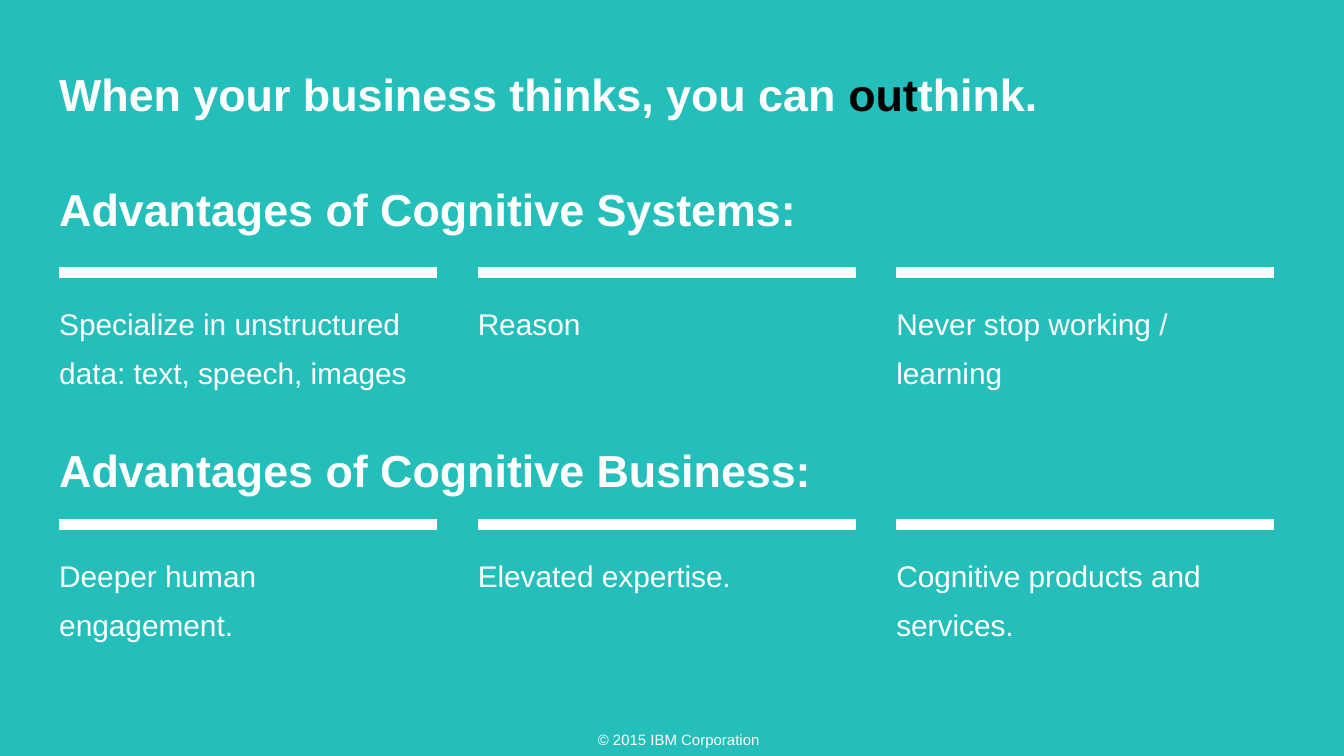
"""Build the slide on the advantages of cognitive systems and business."""
from lxml import etree
from pptx import Presentation
from pptx import util as u
from pptx.dml.color import RGBColor
from pptx.enum import shapes, text
from pptx.oxml.ns import qn

TEAL = RGBColor(0x24, 0xBF, 0xBA)
WHITE = RGBColor(0xFF, 0xFF, 0xFF)
BLACK = RGBColor(0x00, 0x00, 0x00)

LEFT, COL_WIDTH, COL_PITCH = 1.12, 7.14, 7.91
ROWS = [
    (5.15, ["Specialize in unstructured data: text, speech, images",
            "Reason",
            "Never stop working / learning"]),
    (9.91, ["Deeper human engagement.",
            "Elevated expertise.",
            "Cognitive products and services."]),
]


def add_box(s, x, y, w, h, inset=0):
    tf = s.shapes.add_textbox(u.Cm(x), u.Cm(y), u.Cm(w), u.Cm(h)).text_frame
    tf.word_wrap = True
    tf.margin_left = u.Cm(inset)
    return tf


def style(p, size, color=WHITE, bold=False):
    p.font.name = "Arial"
    p.font.size = u.Pt(size)
    p.font.bold = bold
    p.font.color.rgb = color


def add_headings(s):
    tf = add_box(s, LEFT, 0.89, 22.96, 13.41)
    p = tf.paragraphs[0]
    p.line_spacing = u.Pt(36)
    style(p, 24, bold=True)
    for part, color in [("When your business thinks, you can ", WHITE),
                        ("out", BLACK), ("think.", WHITE)]:
        r = p.add_run()
        r.text = part
        r.font.color.rgb = color
    r.text = "think."
    for heading, gap in [("Advantages of Cognitive Systems:", 35.6),
                         ("Advantages of Cognitive Business:", 113.8)]:
        p = tf.add_paragraph()
        p.text = heading
        p.line_spacing = u.Pt(26)
        p.space_before = u.Pt(gap)
        style(p, 24, bold=True)


def add_rule(s, x, y):
    sp = s.shapes.add_connector(shapes.MSO_CONNECTOR.STRAIGHT, u.Cm(x), u.Cm(y),
                                u.Cm(x + COL_WIDTH), u.Cm(y))
    sp.line.color.rgb = WHITE
    sp.line.width = u.Pt(6)
    etree.SubElement(sp._element.spPr, qn("a:effectLst"))


def add_point(s, x, y, label):
    tf = add_box(s, x, y, COL_WIDTH, 2.11)
    tf.auto_size = text.MSO_AUTO_SIZE.SHAPE_TO_FIT_TEXT
    p = tf.paragraphs[0]
    p.text = label
    p.line_spacing = u.Pt(26)
    style(p, 16)


def add_footer(s):
    p = add_box(s, 10.8, 13.69, 3.81, 0.38, inset=0.25).paragraphs[0]
    p.text = "© 2015 IBM Corporation"
    p.alignment = text.PP_ALIGN.RIGHT
    style(p, 8)


def main():
    prs = Presentation()
    prs.slide_width, prs.slide_height = u.Cm(25.4), u.Cm(14.29)
    s = prs.slides.add_slide(prs.slide_layouts[6])
    s.background.fill.solid()
    s.background.fill.fore_color.rgb = TEAL
    add_footer(s)
    add_headings(s)
    for y, labels in ROWS:
        for i, label in enumerate(labels):
            x = LEFT + i * COL_PITCH
            add_rule(s, x, y)
            add_point(s, x, y + 0.27, label)
    prs.save("out.pptx")


if __name__ == "__main__":
    main()
